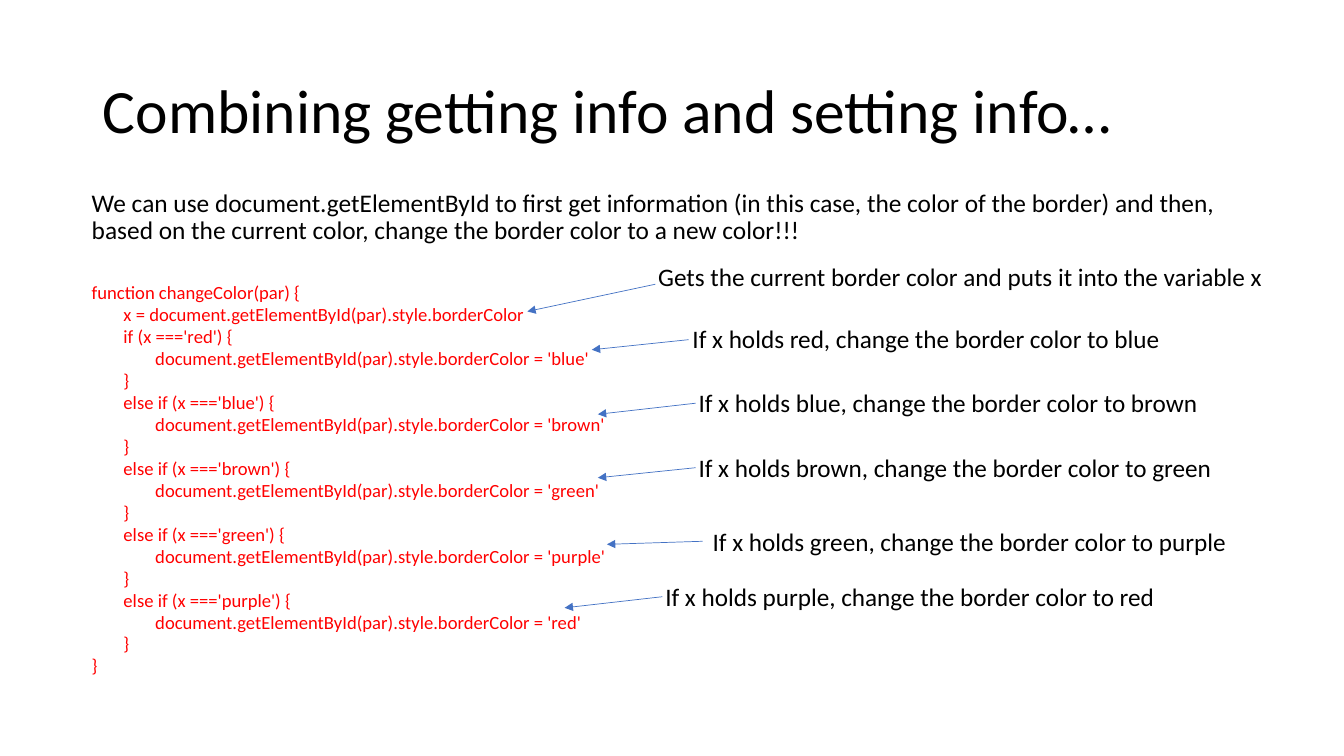
from pptx import Presentation
from pptx.dml.color import RGBColor
from pptx.enum.shapes import MSO_CONNECTOR
from pptx.enum.text import MSO_ANCHOR, MSO_AUTO_SIZE, PP_ALIGN
from pptx.oxml.ns import qn
from pptx.util import Inches, Pt
from lxml import etree

STRAIGHT = MSO_CONNECTOR.STRAIGHT
MIDDLE, TOP = MSO_ANCHOR.MIDDLE, MSO_ANCHOR.TOP
FIXED_SIZE, GROW = MSO_AUTO_SIZE.NONE, MSO_AUTO_SIZE.SHAPE_TO_FIT_TEXT
LEFT = PP_ALIGN.LEFT

BLACK = RGBColor(0x00, 0x00, 0x00)
RED = RGBColor(0xFF, 0x00, 0x00)
BLUE = RGBColor(0x44, 0x72, 0xC4)

INTRO = ("We can use document.getElementById to first get information "
         "(in this case, the color of the border) and then, based on the "
         "current color, change the border color to a new color!!!")
COLORS = ["red", "blue", "brown", "green", "purple", "red"]
COLOR_CHANGES = list(zip(COLORS, COLORS[1:]))

# Note box (left, top, width), then arrow start and arrow tip
FIRST_NOTE = ((6.43, 2.54, 6.27), (6.5, 2.82), (5.23, 3.09))
CHANGE_NOTES = [
    ((6.77, 3.16, 4.9), (6.83, 3.37), (5.87, 3.47)),
    ((6.83, 3.79, 5.21), (6.9, 4), (5.93, 4.11)),
    ((6.83, 4.44, 5.35), (6.9, 4.64), (5.93, 4.74)),
    ((6.97, 5.17, 5.36), (6.97, 5.37), (6.02, 5.4)),
    ((6.5, 5.72, 5.12), (6.57, 5.92), (5.6, 6.03)),
]


def code_lines():
    """Return (indent level, text) for each line of the function."""
    target = "document.getElementById(par).style.borderColor"
    lines = [(0, "function changeColor(par) {"), (1, f"x = {target}")]
    for index, (old, new) in enumerate(COLOR_CHANGES):
        keyword = "else if" if index else "if"
        lines += [(1, f"{keyword} (x ==='{old}') {{"),
                  (2, f"{target} = '{new}'"),
                  (1, "}")]
    return lines + [(0, "}")]


class SlideBuilder:
    font_name = "Calibri"
    indent = 0.315

    def __init__(self, slide):
        self.slide = slide

    def format(self, paragraph, size, color, line_spacing=1.0, after=0):
        paragraph.alignment = LEFT
        paragraph.line_spacing = line_spacing
        paragraph.space_before = Pt(0)
        paragraph.space_after = Pt(after)
        font = paragraph.font
        font.name, font.size, font.color.rgb = self.font_name, Pt(size), color

    def place(self, shape, left, top, width, height, anchor):
        shape.left, shape.top = Inches(left), Inches(top)
        shape.width, shape.height = Inches(width), Inches(height)
        frame = shape.text_frame
        frame.word_wrap = True
        frame.auto_size = FIXED_SIZE
        frame.vertical_anchor = anchor
        return frame

    def title(self, text):
        frame = self.place(self.slide.shapes.title, 0.92, 0.4, 11.5, 1.45, MIDDLE)
        frame.text = text
        self.format(frame.paragraphs[0], 44, BLACK, 0.9)

    def body(self, intro, lines):
        frame = self.place(self.slide.placeholders[1], 0.81, 1.85, 11.6, 5.43, TOP)
        frame.text = intro
        self.format(frame.paragraphs[0], 18.1, BLACK, 0.87, after=28)
        self.remove_bullet(frame.paragraphs[0], 0)
        for level, text in lines:
            paragraph = frame.add_paragraph()
            paragraph.text = text
            self.format(paragraph, 13.3, RED, 0.87, after=1.8)
            self.remove_bullet(paragraph, level)

    def remove_bullet(self, paragraph, level):
        properties = paragraph._p.get_or_add_pPr()
        properties.set("marL", str(Inches(level * self.indent)))
        properties.set("indent", "0")
        etree.SubElement(properties, qn("a:buNone"))

    def arrow(self, start, tip):
        points = [Inches(value) for value in (*start, *tip)]
        connector = self.slide.shapes.add_connector(STRAIGHT, *points)
        connector.line.color.rgb = BLUE
        connector.line.width = Pt(0.5)
        line = connector.line._get_or_add_ln()
        etree.SubElement(line, qn("a:tailEnd"), type="triangle")
        etree.SubElement(connector._element.spPr, qn("a:effectLst"))

    def note(self, text, box, start, tip):
        self.arrow(start, tip)
        left, top, width = (Inches(value) for value in box)
        shape = self.slide.shapes.add_textbox(left, top, width, Inches(0.4))
        frame = shape.text_frame
        frame.word_wrap = False
        frame.auto_size = GROW
        frame.text = text
        self.format(frame.paragraphs[0], 18, BLACK)


def main():
    presentation = Presentation()
    presentation.slide_width = Inches(13.33)
    presentation.slide_height = Inches(7.5)
    layout = presentation.slide_layouts[1]
    builder = SlideBuilder(presentation.slides.add_slide(layout))

    # Title and code
    builder.title("Combining getting info and setting info…")
    builder.body(INTRO, code_lines())

    # Notes with arrows to the code
    builder.note("Gets the current border color and puts it into the variable x",
                 *FIRST_NOTE)
    for (old, new), position in zip(COLOR_CHANGES, CHANGE_NOTES):
        builder.note(f"If x holds {old}, change the border color to {new}", *position)

    presentation.save("out.pptx")


if __name__ == "__main__":
    main()
